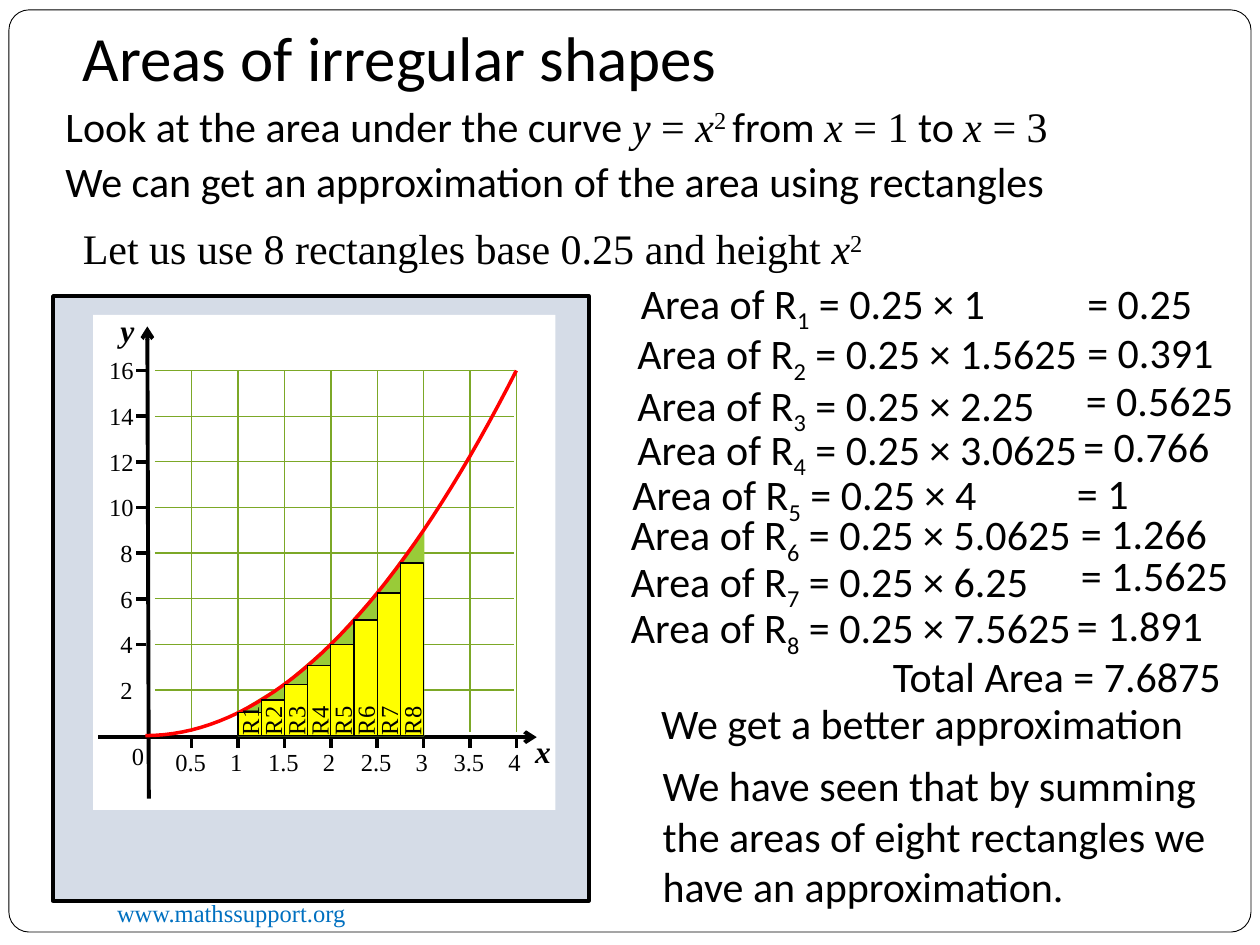
from pptx import Presentation
from pptx.dml.color import RGBColor
from pptx.enum.shapes import MSO_CONNECTOR, MSO_SHAPE
from pptx.oxml.ns import qn
from pptx.util import Cm, Pt
from lxml import etree

STRAIGHT = MSO_CONNECTOR.STRAIGHT
RECTANGLE, ROUNDED = MSO_SHAPE.RECTANGLE, MSO_SHAPE.ROUNDED_RECTANGLE

THEME = {
    "sans": "Calibri", "serif": "Times New Roman",
    "title": 36, "body": 24, "axis": 18, "label": 14,
    "ink": "000000", "paper": "FFFFFF", "panel": "D5DCE7", "link": "0070C0",
    "grid": "7CA827", "area": "99CB38", "curve": "FF0000", "bar": "FFFF00",
}
SANS, SERIF = THEME["sans"], THEME["serif"]
BASELINES = {"sup": "30000", "sub": "-25000"}

# Content: runs are (text, style words); positions in cm
HEADINGS = [  # left, top, width, size, font, runs
    (1.07, 1.9, 22.76, "body", None, [
        ("Look at the area under the curve ", "sans"), ("y", "serif italic"),
        (" = ", "serif"), ("x", "serif italic"), ("2 ", "serif sup"),
        ("from ", "sans"), ("x", "serif italic"), (" = 1", "serif"),
        (" to ", "sans"), ("x", "serif italic"), (" = 3", "serif")]),
    (1.42, 0.25, 22.12, "title", SANS, [("Areas of irregular shapes", "")]),
    (1.07, 3.02, 22.76, "body", SANS,
     [("We can get an approximation of the area using rectangles", "")]),
    (1.42, 4.37, 23.98, "body", SERIF,
     [("Let us use 8 rectangles base 0.25 and height ", ""),
      ("x", "italic"), ("2", "sup")]),
]
AREAS = [  # height, result, left and top of the product, left and top of the result
    ("1", "0.25", 12.67, 5.46, 21.67, 5.46),
    ("1.5625", "0.391", 12.6, 6.48, 21.67, 6.45),
    ("2.25", "0.5625", 12.6, 7.52, 21.64, 7.42),
    ("3.0625", "0.766", 12.6, 8.41, 21.59, 8.36),
    ("4", "1", 12.5, 9.32, 21.46, 9.3),
    ("5.0625", "1.266", 12.47, 10.13, 21.54, 10.11),
    ("6.25", "1.5625", 12.47, 11.07, 21.54, 10.95),
    ("7.5625", "1.891", 12.47, 12.01, 21.46, 11.96),
]
CONCLUSIONS = [  # left, top, width, height, text
    (17.75, 12.98, 7.29, 1.27, "Total Area = 7.6875"),
    (13.08, 13.94, 12.27, 1.27, "We get a better approximation"),
    (13.11, 15.19, 12.27, 3.33, "We have seen that by summing the areas of "
     "eight rectangles we have an approximation."),
]
X_LABELS = ["0.5", "1", "1.5", "2", "2.5", "3", "3.5", "4"]
Y_LABELS = ["2", "4", "6", "8", "10", "12", "14", "16"]

# Graph scale
X_ZERO, X_UNIT = 2.93, 1.87
Y_ZERO, Y_UNIT = 14.83, 0.46
BASE, FIRST_X = 0.25, 1


def graph_x(x):
    return X_ZERO + X_UNIT * x


def graph_y(y):
    return Y_ZERO - Y_UNIT * y


def square_points(start, step, count):
    xs = [start + step * i for i in range(count + 1)]
    return [(graph_x(x), graph_y(x * x)) for x in xs]


def color(name):
    return RGBColor.from_string(THEME[name])


prs = Presentation()
prs.slide_width, prs.slide_height = Cm(25.4), Cm(19.05)
slide = prs.slides.add_slide(prs.slide_layouts[6])
shapes = slide.shapes


def paint(shape, fill=None, line=None, width=1):
    shape.shadow.inherit = False
    if fill:
        shape.fill.solid()
        shape.fill.fore_color.rgb = color(fill)
    else:
        shape.fill.background()
    if line:
        shape.line.color.rgb = color(line)
        shape.line.width = Pt(width)
    else:
        shape.line.fill.background()


def add_box(kind, left, top, width, height, fill, line=None, weight=1):
    box = shapes.add_shape(kind, Cm(left), Cm(top), Cm(width), Cm(height))
    paint(box, fill, line, weight)
    return box


def add_line(x1, y1, x2, y2, ink, weight, arrow=False):
    line = shapes.add_connector(STRAIGHT, Cm(x1), Cm(y1), Cm(x2), Cm(y2))
    line.line.color.rgb = color(ink)
    line.line.width = Pt(weight)
    if arrow:
        etree.SubElement(line.line._get_or_add_ln(), qn("a:tailEnd"), type="arrow")
    etree.SubElement(line._element.spPr, qn("a:effectLst"))


def add_text(left, top, width, height, runs, size, font, ink="ink", wrap=True):
    box = shapes.add_textbox(Cm(left), Cm(top), Cm(width), Cm(height))
    box.text_frame.word_wrap = wrap
    paragraph = box.text_frame.paragraphs[0]
    paragraph.font.size = Pt(THEME[size])
    paragraph.font.color.rgb = color(ink)
    if font:
        paragraph.font.name = font
    for text, style in runs:
        run = paragraph.add_run()
        run.text = text
        for word in style.split():
            if word in BASELINES:
                run._r.get_or_add_rPr().set("baseline", BASELINES[word])
            elif word == "italic":
                run.font.italic = True
            else:
                run.font.name = THEME[word]
    return box


def add_label(left, top, width, text, ink="ink"):
    return add_text(left, top, width, 0.86, [(text, "")], "label", SERIF, ink)


def add_outline(points, closed, fill, line, weight):
    (x, y), *rest = [(Cm(x), Cm(y)) for x, y in points]
    builder = shapes.build_freeform(x, y)
    builder.add_line_segments(rest, close=closed)
    paint(builder.convert_to_shape(), fill, line, weight)


# Page frame and footer
frame = add_box(ROUNDED, 0.18, 0.2, 25.04, 18.59, "paper", "ink", 0.5)
frame.adjustments[0] = 0.022
add_label(2.11, 17.98, 8.25, "www.mathssupport.org", "link")

# Graph panel
add_box(RECTANGLE, 1.07, 5.97, 10.8, 12.19, "panel", "ink", 2.25)
add_box(RECTANGLE, 1.88, 6.35, 9.32, 9.98, "paper")

# Axes with ticks, grid and scale labels
add_line(3, 16.1, 2.97, 6.58, "ink", 2.25, arrow=True)
add_line(1.98, 14.86, 10.82, 14.86, "ink", 2.25, arrow=True)
for text in X_LABELS:
    x = graph_x(float(text))
    add_line(x, 14.88, x, 15.08, "ink", 2)
    add_line(x, 7.47, x, 14.76, "grid", 0.75)
    offset, width = (0.58, 1.2) if "." in text else (0.41, 0.66)
    add_label(x - offset, 14.93, width, text)
for text in Y_LABELS:
    y = graph_y(int(text))
    if text != "2":
        add_line(2.95, y, 2.74, y, "ink", 2)
    add_line(3.12, y, 10.36, y, "grid", 0.75)
    left, width = (2.18, 0.97) if len(text) == 1 else (1.95, 1.3)
    add_label(left, y - 0.43, width, text)
add_label(2.41, 14.81, 0.97, "0")
for name, left, top in [("y", 2.18, 6.15), ("x", 10.54, 14.63)]:
    axis_name = add_text(left, top, 0.8, 1.02, [(name, "")], "axis", SERIF, wrap=False)
    axis_font = axis_name.text_frame.paragraphs[0].font
    axis_font.bold = axis_font.italic = True

# Area under the curve, then the curve y = x²
area_floor = [(graph_x(3), Y_ZERO), (graph_x(1), Y_ZERO)]
add_outline(square_points(1, 0.5, 4) + area_floor, True, "area", "area", 1)
add_outline(square_points(0, 0.1, 40), False, None, "curve", 2)

# Rectangles under the curve, each with an upright label
for i in range(len(AREAS)):
    x = FIRST_X + BASE * i
    height, width = Y_UNIT * x * x, X_UNIT * BASE
    add_box(RECTANGLE, graph_x(x), Y_ZERO - height, width, height, "bar", "ink", 0.75)
for i in range(len(AREAS)):
    middle = graph_x(FIRST_X + BASE * (i + 0.5))
    add_label(middle - 0.57, 14.07, 1.14, f"R{i + 1}").rotation = 270

# Headings, area sums and conclusions
for left, top, width, size, font, runs in HEADINGS:
    add_text(left, top, width, 1.8 if size == "title" else 1.27, runs, size, font)
for number, (height, result, left, top, result_left, result_top) in enumerate(AREAS, 1):
    product = [("Area of R", ""), (str(number), "sub"), (f" = 0.25 × {height}", "")]
    add_text(left, top, 11.9, 1.27, product, "body", SANS)
    add_text(result_left, result_top, 3.6, 1.27, [(f"= {result}", "")], "body", SANS)
for left, top, width, height, text in CONCLUSIONS:
    add_text(left, top, width, height, [(text, "")], "body", SANS)

prs.save("out.pptx")
